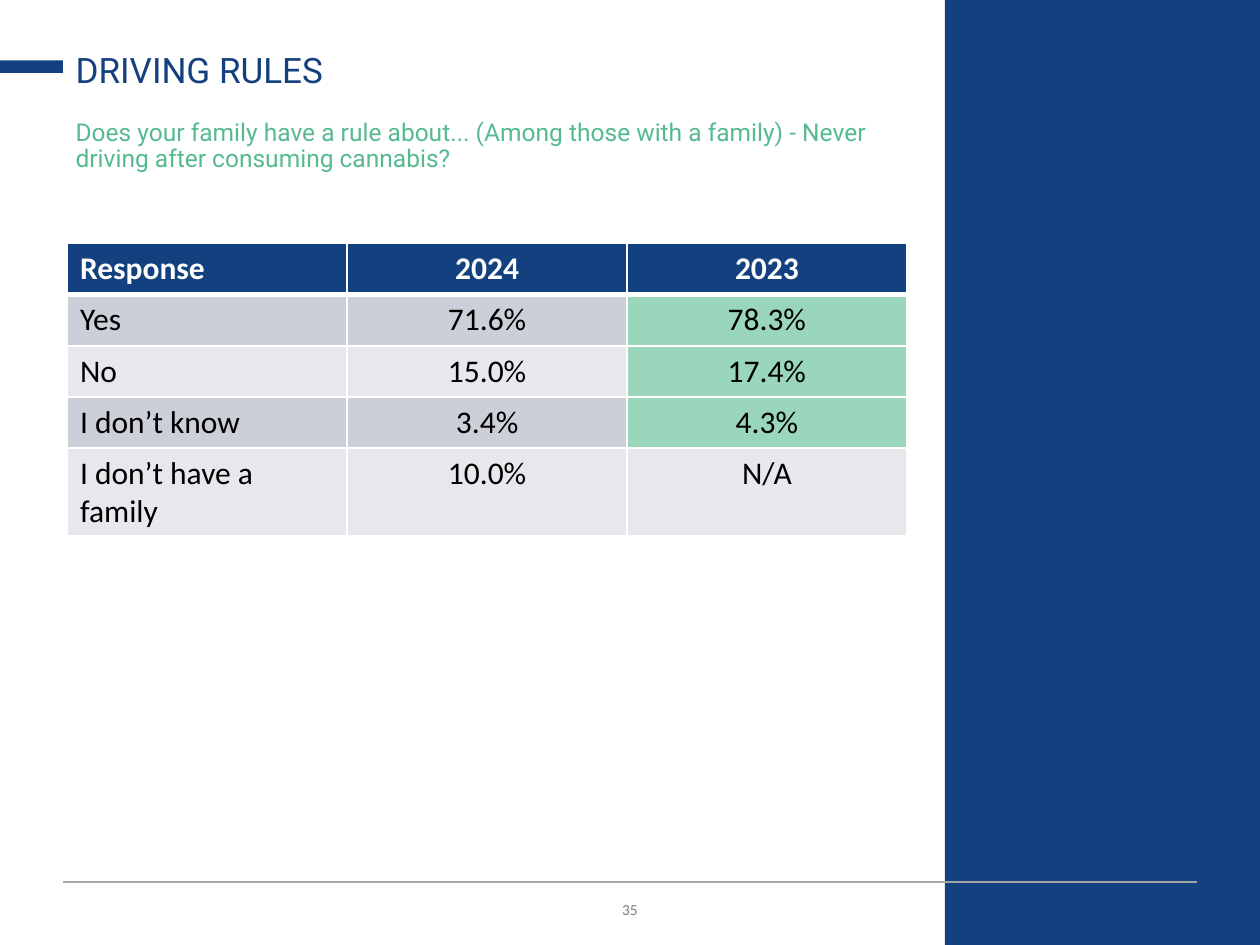
import pptx
import pptx.dml.color
import pptx.enum.shapes
import pptx.enum.text
import pptx.oxml
import pptx.oxml.ns
import pptx.util
from pptx.util import Cm

ALIGN = pptx.enum.text.PP_ALIGN
ANCHOR = pptx.enum.text.MSO_ANCHOR
COLORS = {
    "navy": "13407E",
    "green": "55BA8F",
    "mint": "99D6BC",
    "band_dark": "CCCFD8",
    "band_light": "E7E8EC",
    "rule": "A6A6A6",
    "number": "808080",
    "white": "FFFFFF",
    "black": "000000",
}


def color(name):
    return pptx.dml.color.RGBColor.from_string(COLORS[name])


class SurveyPage:
    """Holds the style and the current slide."""

    heading_font = "Roboto"
    table_font = "Calibri"

    def __init__(self, deck):
        self.page = deck.slides.add_slide(deck.slide_layouts[1])

    def set_text(self, frame, text, font, size, ink, align=ALIGN.LEFT, bold=False):
        frame.text = text
        para = frame.paragraphs[0]
        para.alignment = align
        for span in para.runs:
            span.font.name = font
            span.font.size = pptx.util.Pt(size)
            span.font.bold = bold
            span.font.color.rgb = color(ink)
        return para

    def placeholder(self, index, area, text, size, ink, anchor):
        box = self.page.placeholders[index]
        box.left, box.top, box.width, box.height = map(Cm, area)
        frame = box.text_frame
        frame.auto_size = pptx.enum.text.MSO_AUTO_SIZE.NONE
        frame.vertical_anchor = anchor
        para = self.set_text(frame, text, self.heading_font, size, ink)
        para.line_spacing = 0.9
        para.space_before = pptx.util.Pt(0)
        properties = para._p.get_or_add_pPr()
        properties.set("marL", "0")
        properties.set("indent", "0")
        properties.append(self.element("buNone"))

    def element(self, tag, attributes="", content=""):
        return pptx.oxml.parse_xml(
            f"<a:{tag} {pptx.oxml.ns.nsdecls('a')} {attributes}>{content}</a:{tag}>")

    def block(self, area):
        shape = self.page.shapes.add_shape(
            pptx.enum.shapes.MSO_SHAPE.RECTANGLE, *map(Cm, area))
        shape.shadow.inherit = False
        shape.fill.solid()
        shape.fill.fore_color.rgb = color("navy")
        shape.line.fill.background()

    def rule(self, left, right, top):
        line = self.page.shapes.add_connector(
            pptx.enum.shapes.MSO_CONNECTOR.STRAIGHT,
            Cm(left), Cm(top), Cm(right), Cm(top))
        line.line.color.rgb = color("rule")
        line.line.width = pptx.util.Pt(0.75)
        line._element.spPr.append(self.element("effectLst"))

    def page_number(self, area, text):
        box = self.page.shapes.add_textbox(*map(Cm, area))
        frame = box.text_frame
        frame.word_wrap = True
        frame.vertical_anchor = ANCHOR.MIDDLE
        para = self.set_text(frame, text, self.table_font, 11, "number", ALIGN.CENTER)
        para.runs[0].font._element.set("cap", "small")

    def borders(self, cell, row):
        heavy = {0: "B", 1: "T"}.get(row)  # thick line below the header
        for side in "LRTB":
            width = pptx.util.Pt(3 if side == heavy else 1)
            cell._tc.get_or_add_tcPr().append(self.element(
                f"ln{side}", f'w="{width}"',
                f'<a:solidFill><a:srgbClr val="{COLORS["white"]}"/></a:solidFill>'))

    def table(self, left, top, column_width, row_height, rows, marked):
        columns = len(rows[0])
        table = self.page.shapes.add_table(
            len(rows), columns, Cm(left), Cm(top),
            Cm(column_width * columns), Cm(row_height * len(rows))).table
        for column in table.columns:
            column.width = Cm(column_width)
        for r, values in enumerate(rows):
            table.rows[r].height = Cm(row_height)
            for c, value in enumerate(values):
                cell = table.cell(r, c)
                header = r == 0
                self.set_text(cell.text_frame, value, self.table_font, 18,
                              "white" if header else "black",
                              ALIGN.CENTER if c else ALIGN.LEFT, header)
                self.borders(cell, r)
                if header:
                    fill = "navy"
                elif (r, c) in marked:
                    fill = "mint"
                else:
                    fill = "band_dark" if r % 2 else "band_light"
                cell.fill.solid()
                cell.fill.fore_color.rgb = color(fill)


def main():
    deck = pptx.Presentation()
    deck.slide_width, deck.slide_height = Cm(25.4), Cm(19.05)
    survey = SurveyPage(deck)

    # Frame: side panel, footer rule, page number, title accent
    survey.page_number((1.27, 17.93, 22.86, 0.76), "35")
    survey.block((19.05, 0, 6.35, 19.05))
    survey.rule(1.27, 24.13, 17.78)
    survey.block((0, 1.22, 1.27, 0.25))

    # Title and question
    survey.placeholder(0, (1.27, 0.74, 17.02, 1.22), "DRIVING RULES",
                       20, "navy", ANCHOR.BOTTOM)
    survey.placeholder(
        1, (1.27, 2.29, 17.02, 1.7),
        "Does your family have a rule about... (Among those with a family)"
        " - Never driving after consuming cannabis?",
        14, "green", ANCHOR.TOP)

    # Answers by year
    answers = [
        ("Response", "2024", "2023"),
        ("Yes", "71.6%", "78.3%"),
        ("No", "15.0%", "17.4%"),
        ("I don’t know", "3.4%", "4.3%"),
        ("I don’t have a family", "10.0%", "N/A"),
    ]
    survey.table(1.36, 4.91, 5.64, 1.03, answers,
                 marked={(1, 2), (2, 2), (3, 2)})

    deck.save("out.pptx")


if __name__ == "__main__":
    main()
